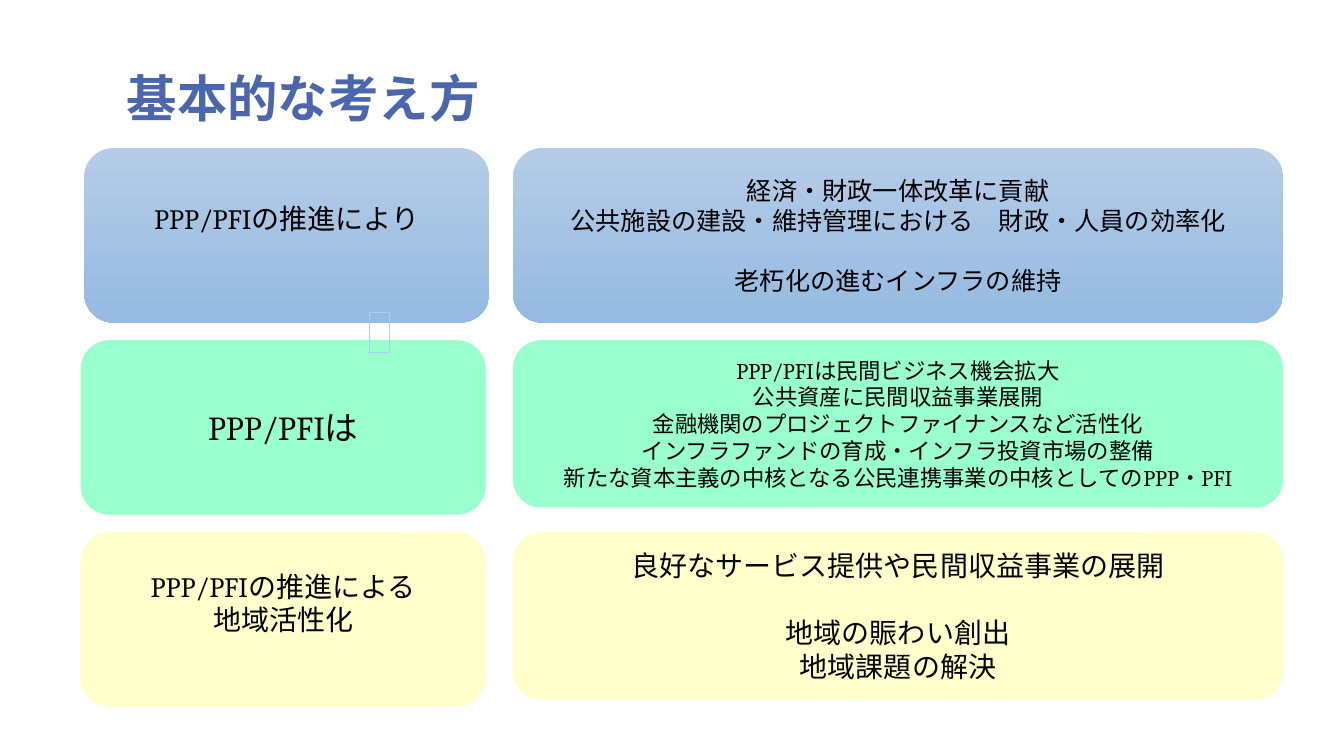
from dataclasses import dataclass

from lxml.etree import SubElement
from pptx import Presentation
from pptx.dml.color import RGBColor
from pptx.enum.shapes import MSO_SHAPE as Shape
from pptx.enum.text import MSO_ANCHOR as Anchor, PP_ALIGN as Align
from pptx.oxml.ns import qn
from pptx.util import Pt


@dataclass(frozen=True)
class Theme:
    title_font: str = "Noto Sans CJK JP"
    body_font: str = "Cambria"
    title_size: int = 36
    large: int = 24
    medium: int = 20
    small: int = 18
    tiny: int = 16
    title: str = "4A66AC"
    text: str = "000000"
    blue: tuple = ("B4CCE7", "96BAE1")
    green: tuple = ("99FFCC",)
    yellow: tuple = ("FFFFCC",)
    marker: str = "ACCBF9"


THEME = Theme()
LINE_HEIGHT = 1.2
INSET = 3.6
ROW_TOP, ROW_PITCH = 105.8, 137.2
TALL, SHORT = 124.6, 119.5
TOPIC_LEFT, TOPIC_WIDTH = 57.6, 289.4
DETAIL_LEFT, DETAIL_WIDTH = 366.5, 550


def rgb(code):
    return RGBColor.from_string(code)


def add_title(slide, text):
    frame = slide.shapes.add_textbox(Pt(83.5), Pt(41.8), Pt(684), Pt(52.6)).text_frame
    frame.word_wrap = True
    frame.vertical_anchor = Anchor.BOTTOM
    heading = frame.paragraphs[0]
    heading.line_spacing = 0.8
    run = heading.add_run()
    run.text = text
    run.font.size = Pt(THEME.title_size)
    run.font.bold = True
    run.font.color.rgb = rgb(THEME.title)
    run.font.name = THEME.title_font
    SubElement(run.font._element, qn("a:ea"), typeface=THEME.title_font)


def paint(card, colours):
    """Fill with one colour, or with a downward gradient between two."""
    if len(colours) == 1:
        card.fill.solid()
        card.fill.fore_color.rgb = rgb(colours[0])
        return
    card.fill.gradient()
    card.fill.gradient_angle = 270
    for stop, colour in zip(card.fill.gradient_stops, colours):
        stop.color.rgb = rgb(colour)


def add_card(slide, left, top, width, height, colours, lines, size,
             gap_before=None, raised=False):
    """Add a rounded card; gap_before is the line that follows an empty line's
    space, and raised lifts the text by half a line."""
    card = slide.shapes.add_shape(
        Shape.ROUNDED_RECTANGLE, Pt(left), Pt(top), Pt(width), Pt(height))
    card.shadow.inherit = False
    card.line.fill.background()
    paint(card, colours)
    frame = card.text_frame
    frame.word_wrap = True
    frame.vertical_anchor = Anchor.MIDDLE
    blank_line = size * LINE_HEIGHT
    if raised:
        frame.margin_bottom = Pt(INSET + blank_line)
    for index, line in enumerate(lines):
        paragraph = frame.paragraphs[0] if index == 0 else frame.add_paragraph()
        paragraph.text = line
        paragraph.alignment = Align.CENTER
        if index == gap_before:
            paragraph.space_before = Pt(blank_line)
        paragraph.font.name = THEME.body_font
        paragraph.font.size = Pt(size)
        paragraph.font.color.rgb = rgb(THEME.text)


def add_marker(slide):
    marker = slide.shapes.add_shape(
        Shape.RECTANGLE, Pt(264.2), Pt(223.2), Pt(14.4), Pt(28.8))
    marker.shadow.inherit = False
    marker.fill.background()
    marker.line.color.rgb = rgb(THEME.marker)
    marker.line.width = Pt(0.75)


def main():
    deck = Presentation()
    deck.slide_width, deck.slide_height = Pt(960), Pt(540)
    slide = deck.slides.add_slide(deck.slide_layouts[6])
    add_title(slide, "基本的な考え方")

    promotion, business, region = (ROW_TOP + row * ROW_PITCH for row in range(3))
    add_card(slide, TOPIC_LEFT + 2.6, promotion, TOPIC_WIDTH, TALL, THEME.blue,
             ["PPP/PFIの推進により"], THEME.medium, raised=True)
    add_card(slide, TOPIC_LEFT, business, TOPIC_WIDTH, TALL, THEME.green,
             ["PPP/PFIは"], THEME.large)
    add_card(slide, TOPIC_LEFT, region, TOPIC_WIDTH, TALL, THEME.yellow,
             ["PPP/PFIの推進による", "地域活性化"], THEME.medium, raised=True)
    add_marker(slide)

    add_card(slide, DETAIL_LEFT, promotion, DETAIL_WIDTH, TALL, THEME.blue, [
        "経済・財政一体改革に貢献",
        "公共施設の建設・維持管理における　財政・人員の効率化",
        "老朽化の進むインフラの維持",
    ], THEME.small, gap_before=2)
    add_card(slide, DETAIL_LEFT, business, DETAIL_WIDTH, SHORT, THEME.green, [
        "PPP/PFIは民間ビジネス機会拡大",
        "公共資産に民間収益事業展開",
        "金融機関のプロジェクトファイナンスなど活性化",
        "インフラファンドの育成・インフラ投資市場の整備",
        "新たな資本主義の中核となる公民連携事業の中核としてのPPP・PFI",
    ], THEME.tiny)
    add_card(slide, DETAIL_LEFT, region, DETAIL_WIDTH, SHORT, THEME.yellow, [
        "良好なサービス提供や民間収益事業の展開",
        "地域の賑わい創出",
        "地域課題の解決",
    ], THEME.medium, gap_before=1)
    deck.save("out.pptx")


if __name__ == "__main__":
    main()
